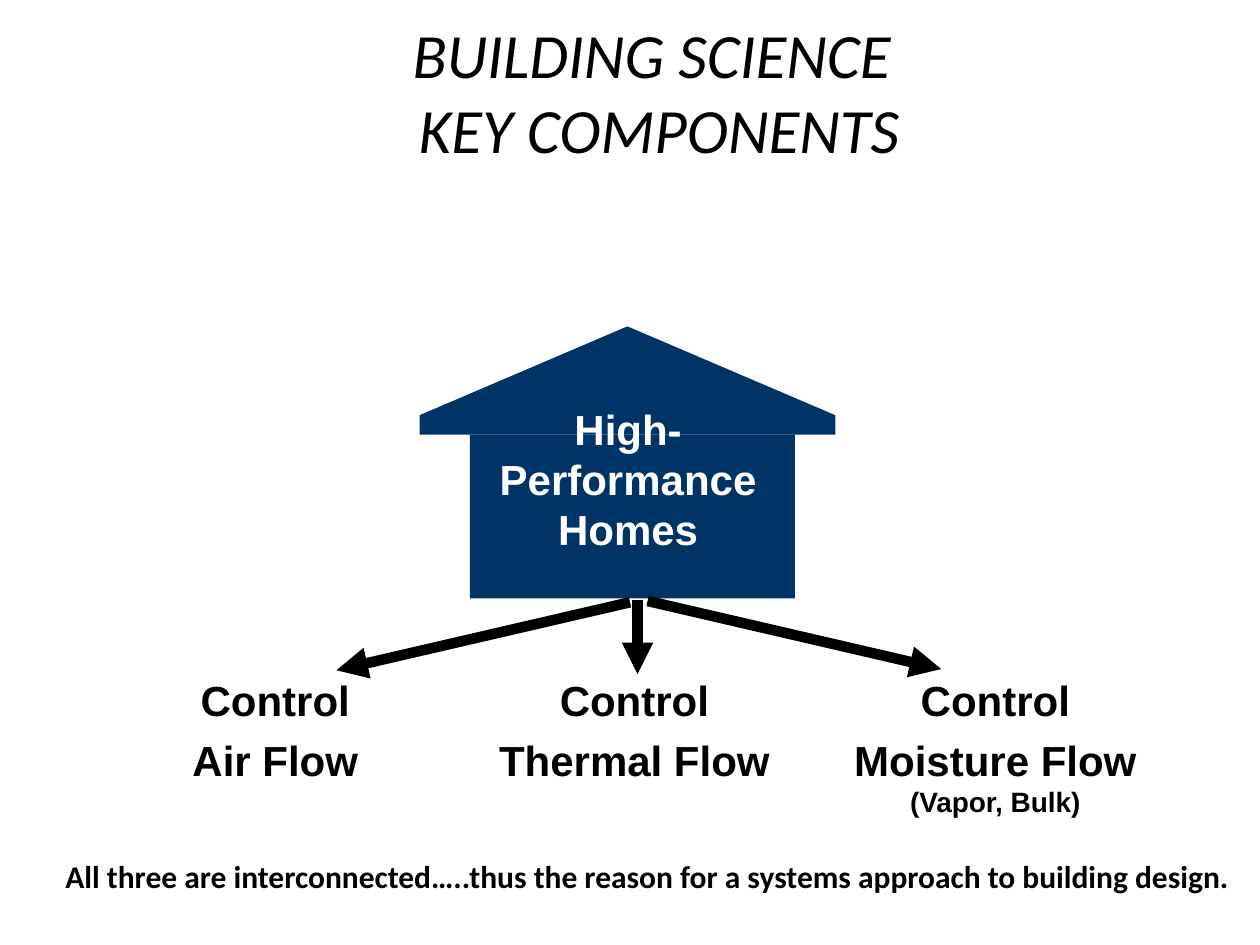
from dataclasses import dataclass

from lxml.etree import SubElement
from pptx import Presentation
from pptx.dml.color import RGBColor
from pptx.enum.shapes import MSO_CONNECTOR, MSO_SHAPE
from pptx.enum.text import MSO_ANCHOR, MSO_AUTO_SIZE, PP_ALIGN
from pptx.oxml.ns import qn
from pptx.util import Inches, Pt


@dataclass(frozen=True)
class Theme:
    ink: RGBColor = RGBColor(0, 0, 0)
    house: RGBColor = RGBColor(0, 0x33, 0x66)
    light: RGBColor = RGBColor(255, 255, 255)
    heading_font: str = "Calibri"
    label_font: str = "Arial"
    title_size: int = 36
    label_size: int = 24
    note_size: int = 16
    closing_size: int = 18
    label_gap: float = 5.5
    arrow_width: int = 6


class SlideBuilder:
    COLUMNS, ROWS = 100, 75

    def __init__(self, deck, theme):
        self.deck = deck
        self.theme = theme
        self.slide = deck.slides.add_slide(deck.slide_layouts[5])

    def place(self, column, row):
        return (round(self.deck.slide_width * column / self.COLUMNS),
                round(self.deck.slide_height * row / self.ROWS))

    def box(self, column, row, columns, rows):
        return *self.place(column, row), *self.place(columns, rows)

    def format(self, frame, font, size, color, align, bold=True, italic=False, gap=0):
        for paragraph in frame.paragraphs:
            paragraph.alignment = align
            paragraph.space_before = Pt(gap)
            for run in paragraph.runs:
                run.font.name = font
                run.font.size = Pt(size)
                run.font.bold = bold
                run.font.italic = italic
                run.font.color.rgb = color

    def title(self, wording, *area):
        heading = self.slide.shapes.title
        heading.left, heading.top, heading.width, heading.height = self.box(*area)
        frame = heading.text_frame
        frame.text = wording
        frame.vertical_anchor = MSO_ANCHOR.MIDDLE
        self.format(frame, self.theme.heading_font, self.theme.title_size,
                    self.theme.ink, PP_ALIGN.CENTER, bold=False)
        for run in frame.paragraphs[0].runs:
            run.font.italic = True

    def text(self, wording, *area, font=None, size=None, color=None,
             align=PP_ALIGN.CENTER, wrap=False, gap=0):
        frame = self.slide.shapes.add_textbox(*self.box(*area)).text_frame
        frame.text = wording
        frame.word_wrap = wrap
        frame.auto_size = MSO_AUTO_SIZE.SHAPE_TO_FIT_TEXT
        self.format(frame, font or self.theme.label_font, size or self.theme.label_size,
                    color or self.theme.ink, align, gap=gap)
        return frame

    def control(self, flow, *area, note=None):
        wording = f"Control\n{flow}" + (f"\v{note}" if note else "")
        frame = self.text(wording, *area, gap=self.theme.label_gap)
        if note:
            frame.paragraphs[-1].runs[-1].font.size = Pt(self.theme.note_size)

    def block(self, kind, *area):
        part = self.slide.shapes.add_shape(kind, *self.box(*area))
        part.shadow.inherit = False
        part.fill.solid()
        part.fill.fore_color.rgb = self.theme.house
        part.line.fill.background()
        return part

    def arrow(self, start, end):
        link = self.slide.shapes.add_connector(
            MSO_CONNECTOR.STRAIGHT, *self.place(*start), *self.place(*end))
        link.line.color.rgb = self.theme.ink
        link.line.width = Pt(self.theme.arrow_width)
        SubElement(link.line._get_or_add_ln(), qn("a:tailEnd"), type="triangle")
        SubElement(link._element.spPr, qn("a:effectLst"))


def main():
    deck = Presentation()
    deck.slide_width, deck.slide_height = Inches(10), Inches(7.5)
    theme = Theme()
    page = SlideBuilder(deck, theme)

    page.title("BUILDING SCIENCE \vKEY COMPONENTS", 20.2, 0, 64.2, 14.4)

    page.control("Air Flow", 14.2, 53, 15.3, 9.9)
    page.control("Moisture Flow", 66.8, 53, 24.4, 12.5, note="(Vapor, Bulk)")
    page.control("Thermal Flow", 38.6, 53, 23.5, 9.8)

    roof = page.block(MSO_SHAPE.PENTAGON, 45.5, 13.7, 8.6, 33)
    roof.rotation = 270
    roof.adjustments[0] = 0.82
    page.block(MSO_SHAPE.RECTANGLE, 37.3, 34.5, 25.8, 13)
    page.text("High-\nPerformance\nHomes", 38, 31.5, 23.7, 13,
              color=theme.light, wrap=True)

    for start, end in (((50, 47.8), (26.7, 53.2)),
                       ((51.4, 47.7), (74.7, 53.1)),
                       ((50.6, 47.6), (50.6, 53.5))):
        page.arrow(start, end)

    page.text("All three are interconnected…..thus the reason for a systems "
              "approach to building design.", 4.2, 67.5, 95.1, 4,
              font=theme.heading_font, size=theme.closing_size, align=PP_ALIGN.LEFT)

    deck.save("out.pptx")


if __name__ == "__main__":
    main()
